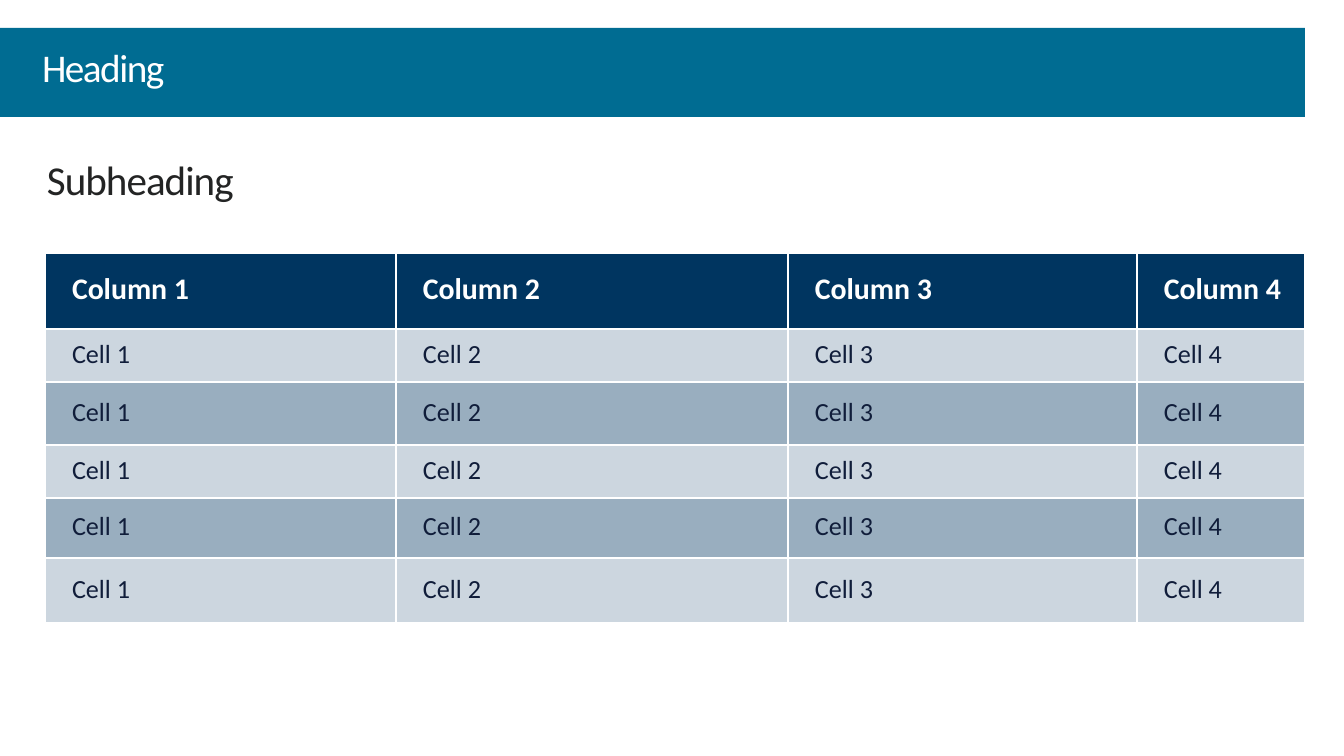
from lxml import etree
from pptx import Presentation
from pptx.dml.color import RGBColor
from pptx.enum.text import MSO_ANCHOR, MSO_AUTO_SIZE, PP_ALIGN
from pptx.oxml.ns import qn
from pptx.util import Pt

MIDDLE, TOP = MSO_ANCHOR.MIDDLE, MSO_ANCHOR.TOP
LEFT = PP_ALIGN.LEFT
NO_FIT = MSO_AUTO_SIZE.NONE
PX = 6804
COLORS = {
    "white": "FFFFFF",
    "teal": "006C92",
    "navy": "003560",
    "ink": "101D3A",
    "charcoal": "232424",
}


def rgb(name):
    return RGBColor.from_string(COLORS[name])


def write(tf, text, size, color, bold=False, spacing=0, line=None):
    p = tf.paragraphs[0]
    p.alignment = LEFT
    p.line_spacing = line
    r = p.add_run()
    r.text = text
    r.font.name = "Calibri"
    r.font.size = Pt(size)
    r.font.bold = bold
    r.font.color.rgb = rgb(color)
    if spacing:
        r.font._element.set("spc", str(spacing))


prs = Presentation()
prs.slide_width, prs.slide_height = 1344 * PX, 756 * PX
s = prs.slides.add_slide(prs.slide_layouts[5])

title = s.shapes.title
title.left, title.top, title.width, title.height = -19 * PX, 28 * PX, 1324 * PX, 89 * PX
title.fill.solid()
title.fill.fore_color.rgb = rgb("teal")
tf = title.text_frame
tf.auto_size = NO_FIT
tf.vertical_anchor = MIDDLE
tf.margin_left = 61 * PX
tf.margin_right = tf.margin_top = tf.margin_bottom = 0
write(tf, "Heading", size=21, color="white", spacing=-80, line=Pt(19.5))

sub = s.shapes.add_textbox(47 * PX, 148 * PX, 1228 * PX, 113 * PX)
tf = sub.text_frame
tf.word_wrap = True
tf.vertical_anchor = TOP
tf.margin_left = tf.margin_right = 0
tf.margin_top = tf.margin_bottom = 7 * PX
write(tf, "Subheading", size=22, color="charcoal", spacing=-50)

widths = [351, 392, 349, 168]
heights = [76, 53, 63, 53, 60, 65]
table = s.shapes.add_table(
    len(heights), len(widths), 45 * PX, 253 * PX, sum(widths) * PX, sum(heights) * PX
).table
for col, width in zip(table.columns, widths):
    col.width = width * PX
for row, height in zip(table.rows, heights):
    row.height = height * PX

for i, row in enumerate(table.rows):
    for j, cell in enumerate(row.cells, 1):
        cell.vertical_anchor = MIDDLE
        cell.margin_left, cell.margin_right = 27 * PX, 0
        cell.margin_top = cell.margin_bottom = 7 * PX
        tcPr = cell._tc.get_or_add_tcPr()
        for side in ("a:lnL", "a:lnR", "a:lnT", "a:lnB"):
            ln = etree.SubElement(tcPr, qn(side), w=str(Pt(1)))
            fill = etree.SubElement(ln, qn("a:solidFill"))
            etree.SubElement(fill, qn("a:srgbClr"), val=COLORS["white"])
        cell.fill.solid()
        cell.fill.fore_color.rgb = rgb("navy")
        if i == 0:
            write(cell.text_frame, f"Column {j}", size=16, color="white", bold=True, line=0.8)
        else:
            shade = tcPr.find(qn("a:solidFill")).find(qn("a:srgbClr"))
            etree.SubElement(shade, qn("a:alpha"), val="20000" if i % 2 else "40000")
            write(cell.text_frame, f"Cell {j}", size=14, color="ink", line=0.8)

prs.save("out.pptx")
